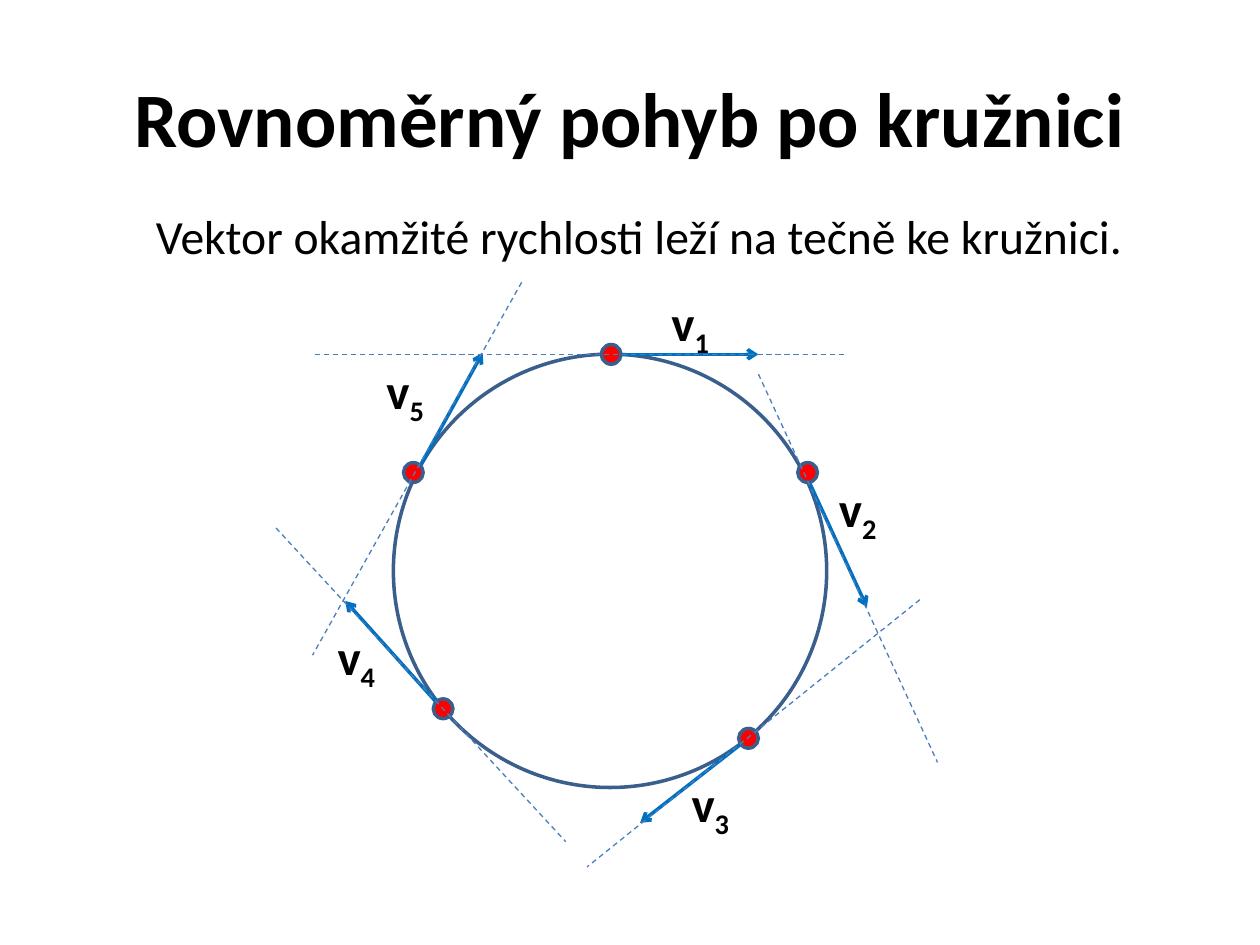
from lxml.etree import SubElement
from pptx import Presentation
from pptx.dml.color import RGBColor
from pptx.enum.dml import MSO_LINE
from pptx.enum.shapes import MSO_CONNECTOR, MSO_SHAPE
from pptx.enum.text import MSO_ANCHOR, MSO_AUTO_SIZE, PP_ALIGN
from pptx.oxml.ns import qn
from pptx.util import Pt


def rgb(value):
    return RGBColor.from_string(value)


class Sketch:
    """Holds the style and the current slide."""
    font, ink = "Calibri", "000000"
    outline, dot_fill = "3A5F8C", "FF0000"
    vector_color, tangent_color = "0070C0", "4B7EBC"
    dot_size = 11.25

    def __init__(self, slide):
        self.s = slide

    def run(self, p, text, size, bold=False):
        r = p.add_run()
        r.text = text
        r.font.name, r.font.size, r.font.bold = self.font, Pt(size), bold
        r.font.color.rgb = rgb(self.ink)
        return r

    def placeholder(self, sp, box, text, size, bold, anchor):
        sp.left, sp.top, sp.width, sp.height = map(Pt, box)
        tf = sp.text_frame
        tf.auto_size = MSO_AUTO_SIZE.NONE
        tf.vertical_anchor = anchor
        p = tf.paragraphs[0]
        p.alignment = PP_ALIGN.CENTER
        self.run(p, text, size, bold)
        return p

    def title(self, text, box):
        self.placeholder(self.s.shapes.title, box, text, 44, True, MSO_ANCHOR.MIDDLE)

    def body(self, text, box):
        p = self.placeholder(self.s.placeholders[1], box, text, 27.2, False, MSO_ANCHOR.TOP)
        p.line_spacing = 0.9
        # No bullet and no hanging indent
        pPr = p._p.get_or_add_pPr()
        pPr.set("marL", "0")
        pPr.set("indent", "0")
        SubElement(pPr, qn("a:buNone"))

    def round_shape(self, kind, center, size, fill=None):
        x, y = center
        sp = self.s.shapes.add_shape(
            kind, Pt(x - size / 2), Pt(y - size / 2), Pt(size), Pt(size))
        sp.shadow.inherit = False
        if fill:
            sp.fill.solid()
            sp.fill.fore_color.rgb = rgb(fill)
        else:
            sp.fill.background()
        sp.line.color.rgb = rgb(self.outline)
        sp.line.width = Pt(2)

    def circle(self, center, size):
        self.round_shape(MSO_SHAPE.OVAL, center, size)

    def dot(self, center):
        self.round_shape(MSO_SHAPE.FLOWCHART_CONNECTOR, center, self.dot_size, self.dot_fill)

    def line(self, start, end, color, width):
        c = self.s.shapes.add_connector(MSO_CONNECTOR.STRAIGHT, *map(Pt, start + end))
        c.line.color.rgb = rgb(color)
        c.line.width = Pt(width)
        SubElement(c._element.spPr, qn("a:effectLst"))
        return c

    def vector(self, start, end):
        c = self.line(start, end, self.vector_color, 2)
        SubElement(c.line._get_or_add_ln(), qn("a:tailEnd"), type="arrow")

    def tangent(self, start, end):
        c = self.line(start, end, self.tangent_color, 0.75)
        c.line.dash_style = MSO_LINE.DASH

    def label(self, index, corner):
        sp = self.s.shapes.add_textbox(*map(Pt, corner + (45.4, 41.2)))
        tf = sp.text_frame
        tf.word_wrap = True
        tf.auto_size = MSO_AUTO_SIZE.SHAPE_TO_FIT_TEXT
        p = tf.paragraphs[0]
        self.run(p, "v", 28, True)
        r = self.run(p, str(index), 28, True)
        r.font._element.set("baseline", "-25000")


# Dot center, vector start and end, tangent start and end, label corner
POSITIONS = [
    ((349.2, 202.5), (354.2, 202.5), (433.4, 202.5), (180, 202.5), (483.8, 202.5), (376.6, 163.4)),
    ((461.5, 270), (462.2, 275), (495.4, 347), (433.4, 213.8), (535.7, 435.6), (472.3, 270)),
    ((427.7, 421.9), (427.7, 421.9), (365.8, 470.2), (525.6, 342.7), (335.5, 495.4), (388.1, 438.5)),
    ((253.2, 405), (249.8, 401.8), (197.3, 343.4), (157.7, 301.7), (323.3, 481), (185.8, 354.2)),
    ((236.2, 270), (237.6, 270.7), (275.8, 201.6), (298.1, 161.3), (178.6, 374.4), (213.8, 202.5)),
]


def main():
    prs = Presentation()
    prs.slide_width, prs.slide_height = Pt(720), Pt(540)
    sketch = Sketch(prs.slides.add_slide(prs.slide_layouts[1]))

    # Heading and statement
    sketch.title("Rovnoměrný pohyb po kružnici", (36, 21.6, 648, 90))
    sketch.body("Vektor okamžité rychlosti leží na tečně ke kružnici.", (56.2, 118.1, 618.5, 54))

    # Circular path
    sketch.circle((348.6, 326.2), 247.6)

    # Velocities at the points of the path
    for index, (center, start, end, _, _, corner) in enumerate(POSITIONS, 1):
        sketch.vector(start, end)
        sketch.dot(center)
        sketch.label(index, corner)

    # Tangents over the points
    for _, _, _, start, end, _ in POSITIONS:
        sketch.tangent(start, end)

    prs.save("out.pptx")


if __name__ == "__main__":
    main()
